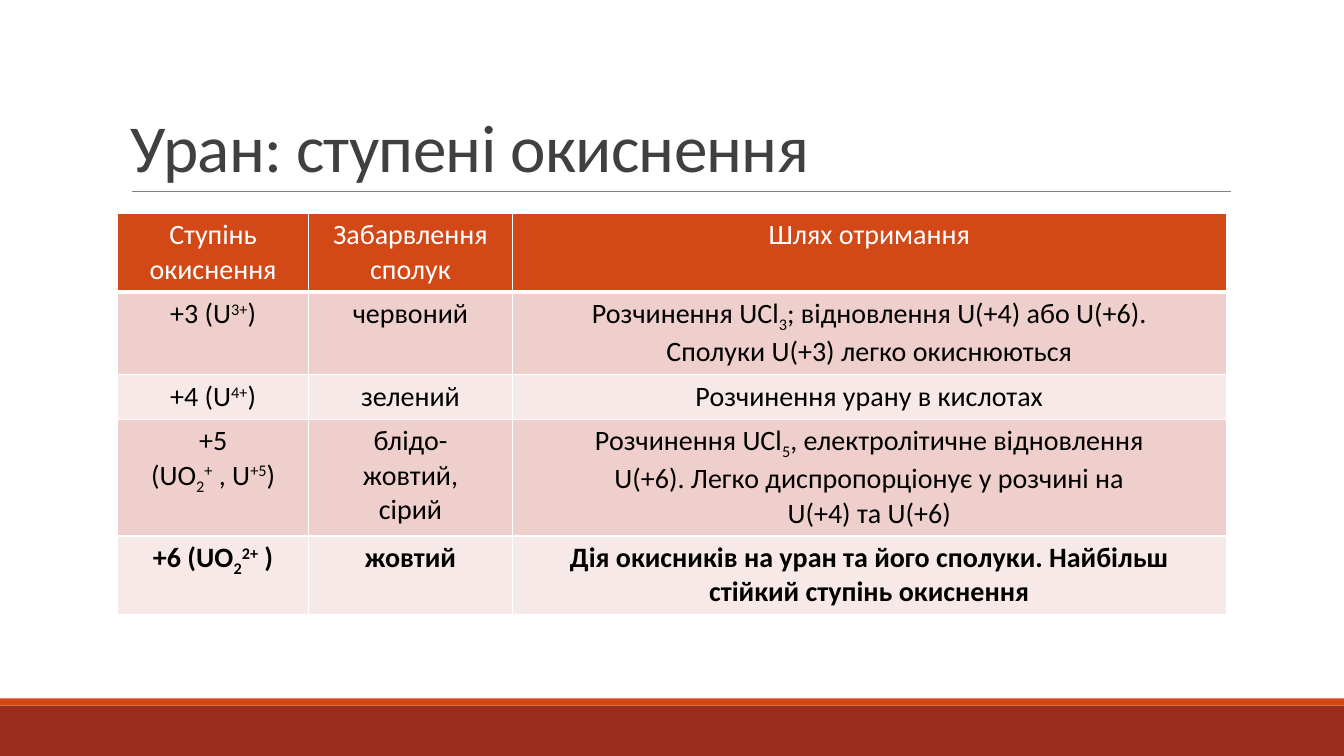
import pptx
import pptx.dml.color
import pptx.enum.shapes
import pptx.enum.text
import pptx.oxml
import pptx.oxml.ns
import pptx.util

SCALE = 9525  # EMU in one px
SUB, SUP = -25000, 30000


def px(length):
    return pptx.util.Emu(length * SCALE)


def color(value):
    return pptx.dml.color.RGBColor.from_string(value)


def sub(text):
    return text, SUB


def sup(text):
    return text, SUP


class SlideBuilder:
    font = "Calibri"
    accent, dark, white, black = "D34817", "9B2D1F", "FFFFFF", "000000"
    title_color, rule_color = "404040", "808080"
    bands = ["EFCFCC", "F7E9E8"]

    def __init__(self, deck):
        self.slide = deck.slides.add_slide(deck.slide_layouts[5])

    def run(self, paragraph, text, size, text_color, bold=False, baseline=0):
        run = paragraph.add_run()
        run.text = text
        run.font.name = self.font
        run.font.size = pptx.util.Pt(size)
        run.font.bold = bold
        run.font.color.rgb = color(text_color)
        if baseline:
            run._r.get_or_add_rPr().set("baseline", str(baseline))
        return run

    def bar(self, left, top, width, height, fill):
        bar = self.slide.shapes.add_shape(
            pptx.enum.shapes.MSO_SHAPE.RECTANGLE,
            px(left), px(top), px(width), px(height))
        bar.shadow.inherit = False
        bar.fill.solid()
        bar.fill.fore_color.rgb = color(fill)
        bar.line.fill.background()

    def rule(self, left, right, y):
        rule = self.slide.shapes.add_connector(
            pptx.enum.shapes.MSO_CONNECTOR.STRAIGHT, px(left), px(y), px(right), px(y))
        rule.line.color.rgb = color(self.rule_color)
        rule.line.width = pptx.util.Pt(0.5)
        rule._element.spPr.append(pptx.oxml.parse_xml(
            f'<a:effectLst {pptx.oxml.ns.nsdecls("a")}/>'))

    def title(self, text, left, top, width, height):
        title = self.slide.shapes.title
        title.left, title.top = px(left), px(top)
        title.width, title.height = px(width), px(height)
        frame = title.text_frame
        frame.word_wrap = True
        frame.auto_size = pptx.enum.text.MSO_AUTO_SIZE.NONE
        frame.vertical_anchor = pptx.enum.text.MSO_ANCHOR.BOTTOM
        paragraph = frame.paragraphs[0]
        paragraph.alignment = pptx.enum.text.PP_ALIGN.LEFT
        paragraph.line_spacing = 0.85
        run = self.run(paragraph, text, 48, self.title_color)
        run._r.get_or_add_rPr().set("spc", "-50")

    def borders(self, cell, top, bottom):
        widths = {"lnL": 1, "lnR": 1, "lnT": top, "lnB": bottom}
        for position, (edge, width) in enumerate(widths.items()):
            cell._tc.get_or_add_tcPr().insert(position, pptx.oxml.parse_xml(
                f'<a:{edge} {pptx.oxml.ns.nsdecls("a")} w="{pptx.util.Pt(width)}">'
                f'<a:solidFill><a:srgbClr val="{self.white}"/></a:solidFill></a:{edge}>'))

    def cell(self, cell, lines, fill, text_color, bold):
        cell.fill.solid()
        cell.fill.fore_color.rgb = color(fill)
        for index, line in enumerate(lines):
            frame = cell.text_frame
            paragraph = frame.add_paragraph() if index else frame.paragraphs[0]
            paragraph.alignment = pptx.enum.text.PP_ALIGN.CENTER
            for part in line:
                text, baseline = (part, 0) if isinstance(part, str) else part
                self.run(paragraph, text, 20, text_color, bold, baseline)

    def table(self, rows, left, top, widths, heights):
        table = self.slide.shapes.add_table(
            len(rows), len(widths), px(left), px(top),
            px(sum(widths)), px(sum(heights))).table
        table.first_row = table.horz_banding = False
        for column, width in zip(table.columns, widths):
            column.width = px(width)
        for index, (row, height) in enumerate(zip(rows, heights)):
            table.rows[index].height = px(height)
            header, last = index == 0, index == len(rows) - 1
            fill = self.accent if header else self.bands[(index - 1) % 2]
            for column, lines in enumerate(row):
                cell = table.cell(index, column)
                self.cell(cell, lines, fill, self.white if header else self.black, last)
                self.borders(cell, 3 if index == 1 else 1, 3 if header else 1)


# Each cell is a list of lines, each line a list of runs
OXIDATION_STATES = [
    [[["Ступінь"], ["окиснення"]],
     [["Забарвлення"], ["сполук"]],
     [["Шлях отримання"]]],
    [[["+3 (U", sup("3+"), ")"]],
     [["червоний"]],
     [["Розчинення UCl", sub("3"), "; відновлення U(+4) або U(+6)."],
      ["Сполуки U(+3) легко окиснюються"]]],
    [[["+4 (U", sup("4+"), ")"]],
     [["зелений"]],
     [["Розчинення урану в кислотах"]]],
    [[["+5"], ["(UO", sub("2"), sup("+"), " , U", sup("+5"), ")"]],
     [["блідо-"], ["жовтий,"], ["сірий"]],
     [["Розчинення UCl", sub("5"), ", електролітичне відновлення"],
      ["U(+6). Легко диспропорціонує у розчині на"],
      ["U(+4) та U(+6)"]]],
    [[["+6 (UO", sub("2"), sup("2+"), " )"]],
     [["жовтий"]],
     [["Дія окисників на уран та його сполуки. Найбільш стійкий ступінь окиснення"]]],
]


def main():
    deck = pptx.Presentation()
    deck.slide_width, deck.slide_height = px(1280), px(720)
    page = SlideBuilder(deck)

    # Footer bands and the line under the title
    page.bar(0, 672, 1280, 48, page.dark)
    page.bar(0, 665, 1280, 7, page.accent)
    page.rule(126, 1172, 182)

    # Title and table of oxidation states
    page.title("Уран: ступені окиснення", 115, 30, 1056, 152)
    page.table(OXIDATION_STATES, 112, 203, [182, 194, 680], [74, 79, 42, 111, 75])

    deck.save("out.pptx")


if __name__ == "__main__":
    main()
